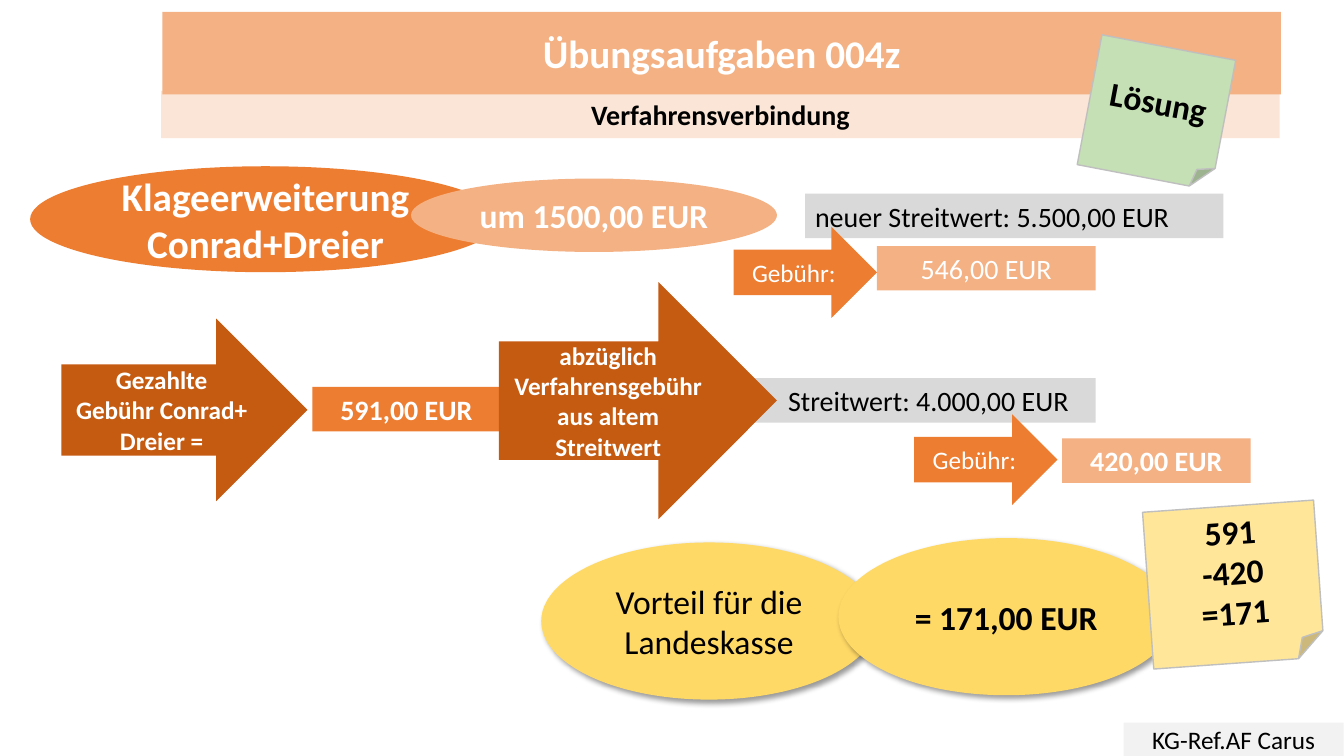
"""Build the slide on fees saved by joining two proceedings."""
from lxml import etree
from pptx import Presentation
from pptx.dml.color import RGBColor
from pptx.enum.shapes import MSO_SHAPE
from pptx.enum.text import MSO_ANCHOR, MSO_AUTO_SIZE, PP_ALIGN
from pptx.oxml.ns import qn
from pptx.util import Cm, Pt

RECT = MSO_SHAPE.RECTANGLE
OVAL = MSO_SHAPE.OVAL
BUBBLE = MSO_SHAPE.FLOWCHART_CONNECTOR
ARROW = MSO_SHAPE.RIGHT_ARROW
NOTE = MSO_SHAPE.FOLDED_CORNER
LEFT, CENTER = PP_ALIGN.LEFT, PP_ALIGN.CENTER
MIDDLE = MSO_ANCHOR.MIDDLE
NO_AUTOFIT = MSO_AUTO_SIZE.NONE

WHITE = RGBColor(0xFF, 0xFF, 0xFF)
BLACK = RGBColor(0x00, 0x00, 0x00)
ORANGE = RGBColor(0xED, 0x7D, 0x31)
DARK_ORANGE = RGBColor(0xC5, 0x5A, 0x11)
LIGHT_ORANGE = RGBColor(0xF4, 0xB1, 0x83)
PALE_ORANGE = RGBColor(0xFB, 0xE5, 0xD6)
GREY = RGBColor(0xD9, 0xD9, 0xD9)
PALE_GREY = RGBColor(0xF2, 0xF2, 0xF2)
NOTE_EDGE = RGBColor(0xBF, 0xBF, 0xBF)
GREEN = RGBColor(0xC5, 0xE0, 0xB4)
GOLD = RGBColor(0xFF, 0xD9, 0x66)
PALE_GOLD = RGBColor(0xFF, 0xE6, 0x99)

FONT = "Calibri"
BAR_HEIGHT = 1.12


def write(frame, text, size=20, color=WHITE, bold=False, align=CENTER, indent=0.25):
    frame.word_wrap = True
    frame.auto_size = NO_AUTOFIT
    frame.vertical_anchor = MIDDLE
    frame.margin_left = Cm(indent)
    for index, line in enumerate(text.split("\n")):
        paragraph = frame.add_paragraph() if index else frame.paragraphs[0]
        paragraph.alignment = align
        run = paragraph.add_run()
        run.text = line
        run.font.name = FONT
        run.font.size = Pt(size)
        run.font.bold = bold
        run.font.color.rgb = color


class FeeSlide:
    """Holds the slide and draws its elements in one flat style."""

    def __init__(self, deck):
        self.slide = deck.slides.add_slide(deck.slide_layouts[5])

    def title(self, box, text, fill):
        heading = self.slide.shapes.title
        heading.left, heading.top, heading.width, heading.height = map(Cm, box)
        outline = etree.SubElement(heading.element.spPr, qn("a:prstGeom"), prst="roundRect")
        etree.SubElement(outline, qn("a:avLst"))
        heading.fill.solid()
        heading.fill.fore_color.rgb = fill
        write(heading.text_frame, text, size=28, bold=True)
        self.slide.shapes.element.append(heading.element)

    def block(self, kind, box, text, fill, **style):
        shape = self.slide.shapes.add_shape(kind, *map(Cm, box))
        shape.shadow.inherit = False
        shape.fill.solid()
        shape.fill.fore_color.rgb = fill
        shape.line.fill.background()
        write(shape.text_frame, text, **style)
        return shape

    def bar(self, left, top, width, text, fill, **style):
        self.block(RECT, (left, top, width, BAR_HEIGHT), text, fill, **style)

    def note(self, box, text, fill, turn):
        paper = self.block(NOTE, box, text, fill, size=24, color=BLACK, bold=True)
        paper.rotation = turn
        paper.line.color.rgb = NOTE_EDGE
        paper.line.width = Pt(1)

    def fee_arrow(self, left, top):
        self.block(ARROW, (left, top, 3.61, 2.29), "Gebühr:", ORANGE, size=18)

    def result(self, left, top, text, bold=False):
        oval = self.block(OVAL, (left, top, 8.46, 3.96), text, GOLD,
                          size=24, color=BLACK, bold=bold)
        effects = oval.element.spPr.find(qn("a:effectLst"))
        shadow = etree.SubElement(effects, qn("a:outerShdw"), blurRad=str(Pt(4)),
                                  dist=str(Pt(3)), dir="2700000", rotWithShape="0")
        tint = etree.SubElement(shadow, qn("a:srgbClr"), val=str(BLACK))
        etree.SubElement(tint, qn("a:alpha"), val="40000")


def main():
    deck = Presentation()
    deck.slide_width, deck.slide_height = Cm(33.87), Cm(19.05)
    page = FeeSlide(deck)

    page.bar(7.87, 9.75, 4.75, "591,00 EUR", ORANGE, bold=True)
    page.bar(26.77, 11.05, 4.75, "420,00 EUR", LIGHT_ORANGE, bold=True)
    page.bar(22.1, 6.2, 5.51, "546,00 EUR", LIGHT_ORANGE)
    page.bar(17.07, 9.53, 10.54, "Streitwert: 4.000,00 EUR", GREY,
             color=BLACK, align=LEFT, indent=2.79)
    page.bar(20.29, 4.88, 10.54, "neuer Streitwert: 5.500,00 EUR", GREY,
             color=BLACK, align=LEFT)

    page.block(RECT, (4.06, 2.29, 28.19, 1.19), "Verfahrensverbindung", PALE_ORANGE,
               color=BLACK, bold=True)
    page.block(RECT, (28.32, 18.21, 5.54, 0.84), "KG-Ref.AF Carus", PALE_GREY,
               size=18, color=BLACK)
    page.title((4.09, 0.3, 28.19, 2.08), "Übungsaufgaben 004z", LIGHT_ORANGE)
    page.note((27.43, 1.17, 3.43, 3.33), "Lösung", GREEN, 10.8)

    page.block(BUBBLE, (0.76, 4.19, 11.86, 2.67), "Klageerweiterung Conrad+Dreier",
               ORANGE, size=28, bold=True)
    page.block(BUBBLE, (10.36, 4.5, 9.22, 1.85), "um 1500,00 EUR",
               LIGHT_ORANGE, size=24, bold=True)

    page.fee_arrow(18.49, 5.72)
    page.block(ARROW, (12.57, 7.11, 7.01, 5.97),
               "abzüglich Verfahrensgebühr aus altem Streitwert",
               DARK_ORANGE, size=18, bold=True)
    page.fee_arrow(23.04, 10.44)
    page.block(ARROW, (1.55, 8.03, 6.2, 4.6), "Gezahlte\nGebühr Conrad+ Dreier =",
               DARK_ORANGE, size=18, bold=True)

    page.result(13.64, 13.67, "Vorteil für die Landeskasse")
    page.result(21.13, 13.56, "= 171,00 EUR", bold=True)
    page.note((28.93, 12.75, 4.32, 3.96), "591\n-420\n=171", PALE_GOLD, 355.9)

    deck.save("out.pptx")


if __name__ == "__main__":
    main()
